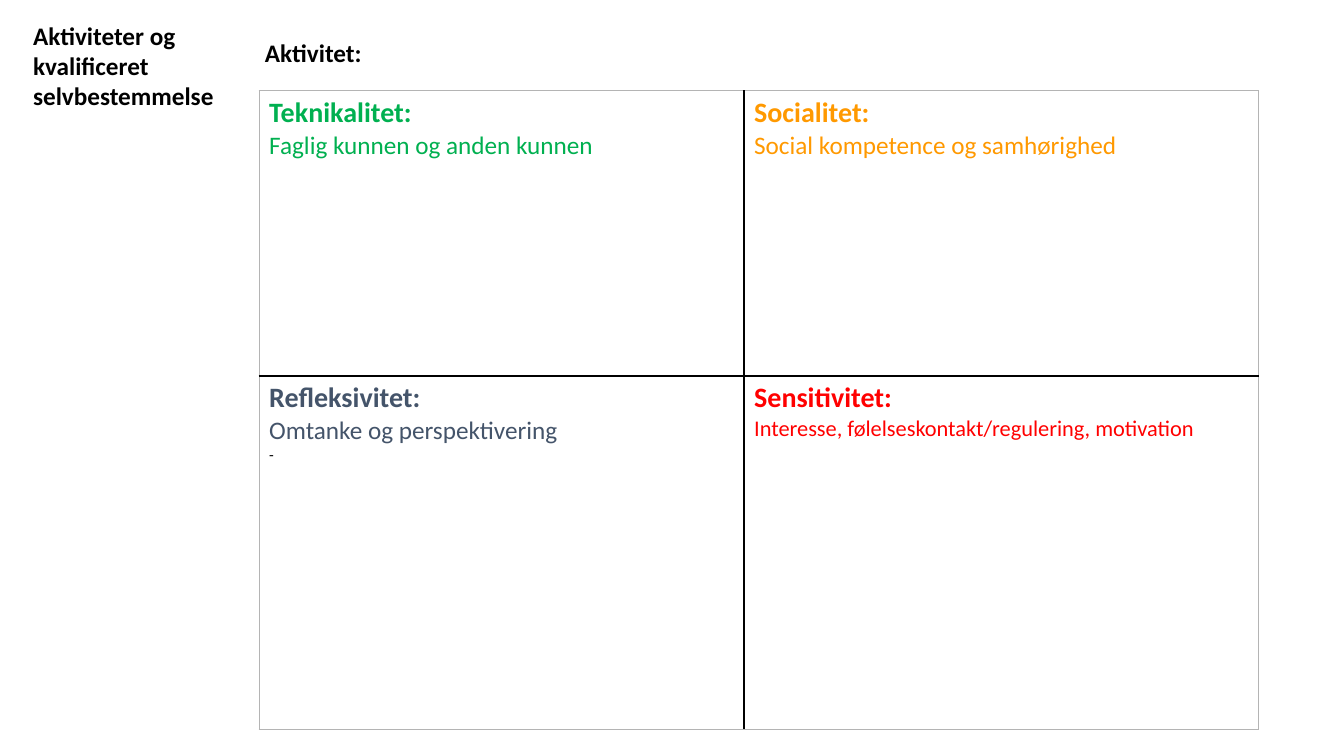
"""Build a slide with a two by two grid of activity dimensions."""
from lxml.etree import SubElement as Sub
from pptx import Presentation
from pptx.dml.color import RGBColor as RGB
from pptx.enum.text import MSO_AUTO_SIZE as Auto
from pptx.oxml import parse_xml as to_xml
from pptx.oxml.ns import nsdecls, qn
from pptx.util import Inches, Pt

BLACK = RGB(0x00, 0x00, 0x00)
GREEN = RGB(0x00, 0xB0, 0x50)
AMBER = RGB(0xFF, 0x99, 0x00)
SLATE = RGB(0x44, 0x54, 0x6A)
RED = RGB(0xFF, 0x00, 0x00)
GREY = RGB(0xB4, 0xB4, 0xB4)


def write(para, text, size, color, bold=False):
    para.text = text
    look = {"name": "Calibri", "size": Pt(size), "bold": bold}
    for run in para.runs:
        for key, value in look.items():
            setattr(run.font, key, value)
        run.font.color.rgb = color


deck = Presentation()
deck.slide_width, deck.slide_height = Inches(13.33), Inches(7.5)
slide = deck.slides.add_slide(deck.slide_layouts[6])

widths, heights = [4.81, 5.1], [2.83, 3.51]
frame = slide.shapes.add_table(
    2, 2, Inches(2.57), Inches(0.9), Inches(sum(widths)), Inches(sum(heights)))
table = frame.table
table.first_row = table.horz_banding = False
for col, width in zip(table.columns, widths):
    col.width = Inches(width)
for row, height in zip(table.rows, heights):
    row.height = Inches(height)

fields = [
    ("Teknikalitet:", "Faglig kunnen og anden kunnen", 18, GREEN),
    ("Socialitet:", "Social kompetence og samhørighed", 18, AMBER),
    ("Refleksivitet:", "Omtanke og perspektivering", 18, SLATE),
    ("Sensitivitet:", "Interesse, følelseskontakt/regulering, motivation", 16, RED),
]
for n, (title, detail, size, color) in enumerate(fields):
    r, c = divmod(n, 2)
    cell = table.cell(r, c)
    cell.fill.background()
    body = cell.text_frame
    write(body.paragraphs[0], title, 20, color, True)
    write(body.add_paragraph(), detail, size, color)
    inner = {"lnL": c == 1, "lnR": c == 0, "lnT": r == 1, "lnB": r == 0}
    props = cell._tc.get_or_add_tcPr()
    for i, (side, mid) in enumerate(inner.items()):
        props.insert(i, to_xml(
            f'<a:{side} {nsdecls("a")} w="12700"><a:solidFill>'
            f'<a:srgbClr val="{BLACK if mid else GREY}"/>'
            f'</a:solidFill></a:{side}>'))

item = table.cell(1, 0).text_frame.add_paragraph()
write(item, " ", 11, BLACK)
style = item._p.get_or_add_pPr()
style.set("marL", "171450")
style.set("indent", "-171450")
Sub(style, qn("a:buFont")).set("typeface", "Calibri")
Sub(style, qn("a:buChar")).set("char", "-")

labels = [
    ("Aktiviteter og kvalificeret\vselvbestemmelse", 0.23, 0.15, 2.33, 1.01),
    ("Aktivitet:", 2.53, 0.32, 1.33, 0.4),
]
for text, *place in labels:
    box = slide.shapes.add_textbox(*map(Inches, place))
    box.text_frame.word_wrap = True
    box.text_frame.auto_size = Auto.SHAPE_TO_FIT_TEXT
    write(box.text_frame.paragraphs[0], text, 18, BLACK, True)

deck.save("out.pptx")
